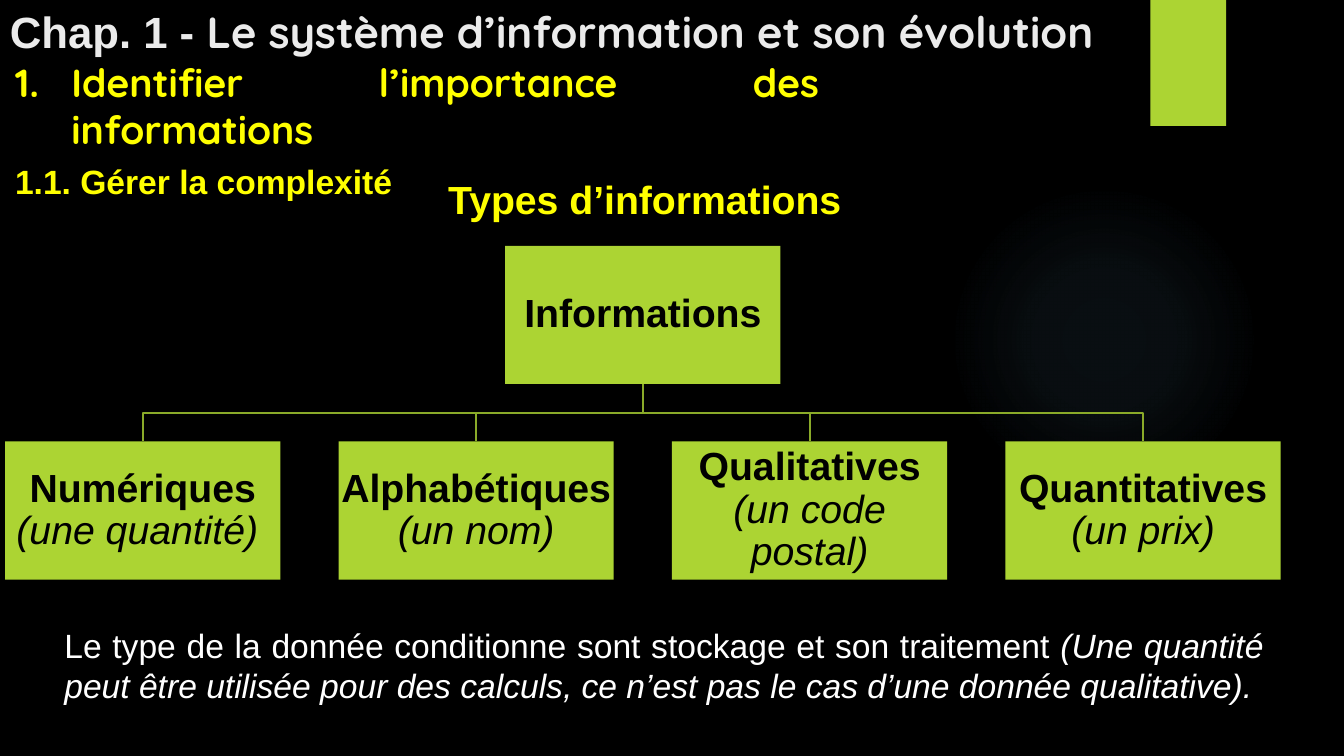
from dataclasses import dataclass

from lxml import etree
from pptx import Presentation
from pptx.dml.color import RGBColor
from pptx.enum.shapes import MSO_SHAPE
from pptx.enum.text import MSO_ANCHOR, PP_ALIGN
from pptx.oxml import parse_xml
from pptx.oxml.ns import nsdecls, qn
from pptx.util import Emu, Inches, Pt

RECTANGLE, ELLIPSE = MSO_SHAPE.RECTANGLE, MSO_SHAPE.OVAL
LEFT, CENTER, JUSTIFY = PP_ALIGN.LEFT, PP_ALIGN.CENTER, PP_ALIGN.JUSTIFY
TOP, MIDDLE = MSO_ANCHOR.TOP, MSO_ANCHOR.MIDDLE
SLIDE_WIDTH, SLIDE_HEIGHT = Inches(13.33), Inches(7.5)


@dataclass(frozen=True)
class Theme:
    background: str = "000000"
    green: str = "ACD433"
    branch: str = "8AAA29"
    glow: str = "7AC4F0"
    yellow: str = "FFFF00"
    white: str = "FFFFFF"
    title: str = "EBEBEB"
    black: str = "000000"
    title_size: float = 31.2
    heading_size: float = 28
    body_size: float = 24
    branch_width: float = 1.5
    plain_font: str = "Arial"
    display_font: str = "Quicksand"


THEME = Theme()


@dataclass(frozen=True)
class Area:
    """Percentages of the slide's width and height."""
    left: float
    top: float
    width: float
    height: float

    def lengths(self) -> tuple[Emu, Emu, Emu, Emu]:
        return (across(self.left), down(self.top), across(self.width), down(self.height))


@dataclass(frozen=True)
class Piece:
    text: str
    size: float
    color: str
    bold: bool = False
    italic: bool = False
    font: str = THEME.plain_font


@dataclass(frozen=True)
class Node:
    column: float
    row: int
    name: str
    example: str = ""

    def area(self) -> Area:
        return Area(0.38 + 24.81 * self.column, 32.53 + 25.87 * self.row, 20.48, 18.27)

    def pieces(self) -> list[Piece]:
        name = Piece(self.name, THEME.heading_size, THEME.black, bold=True)
        example = Piece(self.example, THEME.heading_size, THEME.black, italic=True)
        return [name, example] if self.example else [name]


GLOW = Area(70.6, 24.4, 23.1, 41.07)
ACCENT = Area(85.6, 0, 5.63, 16.67)
TITLE = Area(0, 0, 92.95, 11.07)
OUTLINE = Area(0.38, 7.07, 61.29, 14.13)
HEADING = Area(1.8, 22.53, 92.35, 13.07)
CONCLUSION = Area(4.05, 82, 90.7, 12.13)

ROOT = Node(1.5, 0, "Informations")
KINDS = [
    Node(column, 1, name, example)
    for column, (name, example) in enumerate([
        ("Numériques ", "(une quantité) "),
        ("Alphabétiques ", "(un nom)"),
        ("Qualitatives ", "(un code postal)"),
        ("Quantitatives ", "(un prix)"),
    ])
]


def across(percent: float) -> Emu:
    return Emu(round(SLIDE_WIDTH * percent / 100))


def down(percent: float) -> Emu:
    return Emu(round(SLIDE_HEIGHT * percent / 100))


def write(paragraph, pieces: list[Piece], alignment) -> None:
    paragraph.alignment = alignment
    for piece in pieces:
        run = paragraph.add_run()
        run.text = piece.text
        font = run.font
        font.name, font.size = piece.font, Pt(piece.size)
        font.bold, font.italic = piece.bold, piece.italic
        font.color.rgb = RGBColor.from_string(piece.color)


def add_text(slide, area: Area, pieces: list[Piece], alignment):
    text_frame = slide.shapes.add_textbox(*area.lengths()).text_frame
    text_frame.word_wrap = True
    text_frame.vertical_anchor = TOP
    write(text_frame.paragraphs[0], pieces, alignment)
    return text_frame


def add_panel(slide, area: Area, color: str, preset=RECTANGLE):
    shape = slide.shapes.add_shape(preset, *area.lengths())
    shape.shadow.inherit = False
    shape.line.fill.background()
    shape.fill.solid()
    shape.fill.fore_color.rgb = RGBColor.from_string(color)
    return shape


def add_glow(slide) -> None:
    properties = add_panel(slide, GLOW, THEME.glow, ELLIPSE)._element.spPr
    stops = "".join(
        f'<a:gs pos="{position}000"><a:srgbClr val="{THEME.glow}">'
        f'<a:alpha val="{opacity}000"/></a:srgbClr></a:gs>'
        for position, opacity in [(0, 7), (36, 6), (69, 0), (100, 0)]
    )
    gradient = parse_xml(
        f'<a:gradFill {nsdecls("a")} rotWithShape="1"><a:gsLst>{stops}</a:gsLst>'
        '<a:path path="circle"><a:fillToRect l="50000" t="50000" r="50000" b="50000"/>'
        '</a:path></a:gradFill>'
    )
    properties.replace(properties.find(qn("a:solidFill")), gradient)


def add_accent(slide) -> None:
    effects = add_panel(slide, ACCENT, THEME.green)._element.spPr.find(qn("a:effectLst"))
    effects.append(parse_xml(
        f'<a:outerShdw {nsdecls("a")} blurRad="{Pt(3)}" dist="{Pt(2)}" dir="5400000" '
        f'rotWithShape="0"><a:srgbClr val="{THEME.black}"><a:alpha val="45000"/>'
        '</a:srgbClr></a:outerShdw>'
    ))


def add_branch(slide, parent: Node, child: Node) -> None:
    start, end = parent.area(), child.area()
    start_x = across(start.left + start.width / 2)
    end_x = across(end.left + end.width / 2)
    start_y, end_y = down(start.top + start.height), down(end.top)
    middle_y = (start_y + end_y) // 2
    builder = slide.shapes.build_freeform(start_x, start_y)
    builder.add_line_segments(
        [(start_x, middle_y), (end_x, middle_y), (end_x, end_y)], close=False)
    branch = builder.convert_to_shape()
    branch.shadow.inherit = False
    branch.fill.background()
    branch.line.color.rgb = RGBColor.from_string(THEME.branch)
    branch.line.width = Pt(THEME.branch_width)


def add_node(slide, node: Node) -> None:
    text_frame = add_panel(slide, node.area(), THEME.green).text_frame
    text_frame.word_wrap = True
    text_frame.vertical_anchor = MIDDLE
    text_frame.margin_left = text_frame.margin_right = Inches(0.02)
    text_frame.margin_top = text_frame.margin_bottom = Inches(0.02)
    paragraph = text_frame.paragraphs[0]
    paragraph.line_spacing = 0.9
    write(paragraph, node.pieces(), CENTER)


def add_outline(slide) -> None:
    chapter = Piece("Identifier l’importance des informations", THEME.heading_size,
                    THEME.yellow, bold=True, font=THEME.display_font)
    section = Piece("1.1. Gérer la complexité", THEME.body_size, THEME.yellow, bold=True)
    text_frame = add_text(slide, OUTLINE, [chapter], JUSTIFY)
    properties = text_frame.paragraphs[0]._p.get_or_add_pPr()
    properties.set("marL", str(Inches(0.56)))
    properties.set("indent", str(-Inches(0.56)))
    etree.SubElement(properties, qn("a:buFont"), typeface="+mj-lt")
    etree.SubElement(properties, qn("a:buAutoNum"), type="arabicPeriod")
    paragraph = text_frame.add_paragraph()
    paragraph.space_before = Pt(6)
    write(paragraph, [section], JUSTIFY)


def main() -> None:
    presentation = Presentation()
    presentation.slide_width, presentation.slide_height = SLIDE_WIDTH, SLIDE_HEIGHT
    slide = presentation.slides.add_slide(presentation.slide_layouts[6])
    slide.background.fill.solid()
    slide.background.fill.fore_color.rgb = RGBColor.from_string(THEME.background)
    add_glow(slide)
    add_accent(slide)
    add_text(slide, HEADING, [Piece("Types d’informations", THEME.heading_size, THEME.yellow, bold=True)], CENTER)
    for kind in reversed(KINDS):
        add_branch(slide, ROOT, kind)
    for node in [ROOT, *KINDS]:
        add_node(slide, node)
    add_text(slide, CONCLUSION, [
        Piece("Le type de la donnée conditionne sont stockage et son traitement ", THEME.body_size, THEME.white),
        Piece("(Une quantité peut être utilisée pour des calculs, ce n’est pas le cas d’une donnée qualitative).",
              THEME.body_size, THEME.white, italic=True),
    ], JUSTIFY)
    add_text(slide, TITLE, [
        Piece("Chap. 1 - ", THEME.title_size, THEME.title, bold=True),
        Piece("Le système d’information et son évolution", THEME.title_size, THEME.title,
              bold=True, font=THEME.display_font),
    ], LEFT)
    add_outline(slide)
    presentation.save("out.pptx")


if __name__ == "__main__":
    main()
